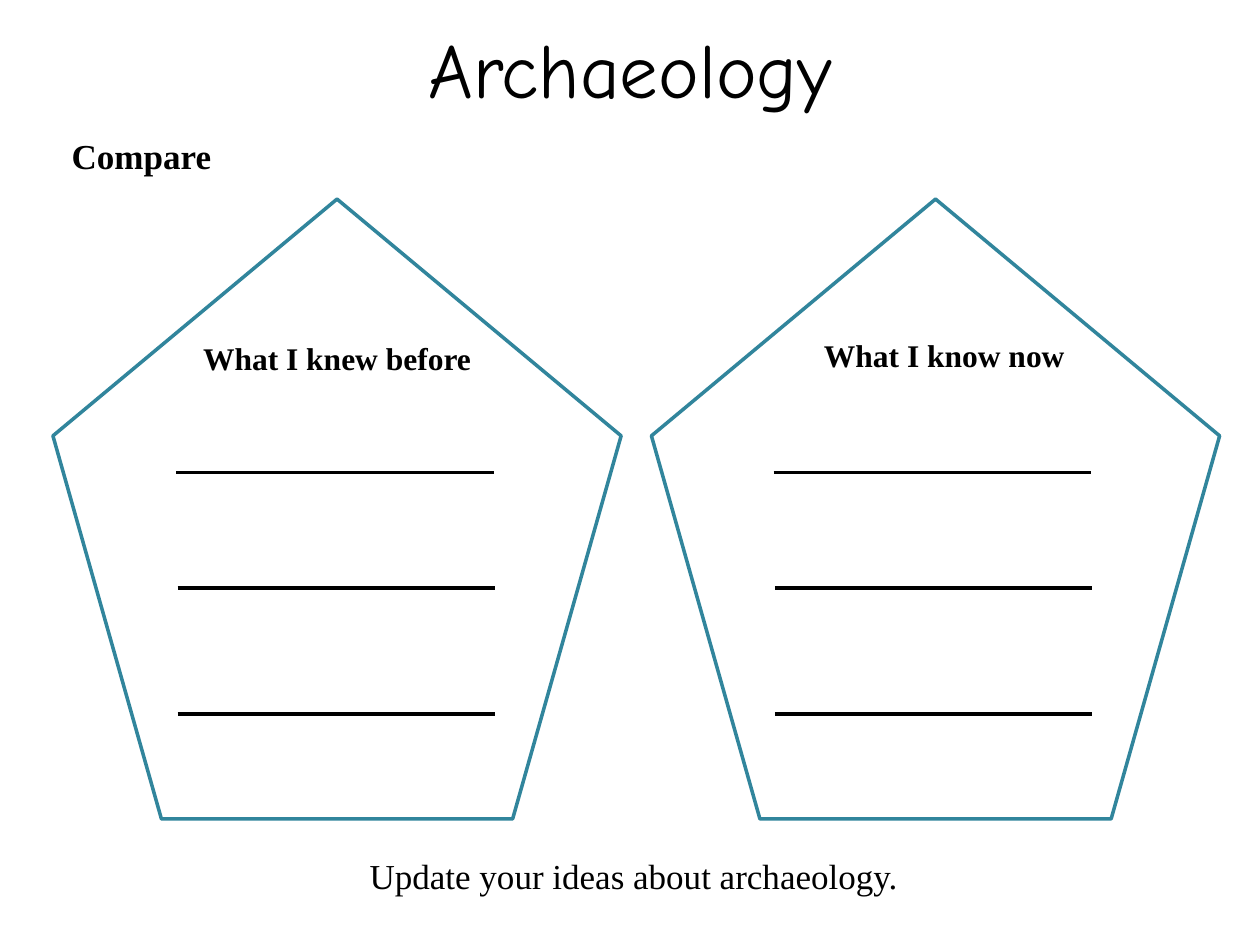
from dataclasses import dataclass

from lxml.etree import SubElement
from pptx import Presentation
from pptx.dml.color import RGBColor
from pptx.enum.shapes import MSO_CONNECTOR, MSO_SHAPE
from pptx.enum.text import MSO_ANCHOR, MSO_AUTO_SIZE, PP_ALIGN
from pptx.oxml.ns import qn
from pptx.util import Inches, Pt


@dataclass(frozen=True)
class Theme:
    """Colours, fonts and sizes of the worksheet."""
    ink: RGBColor = RGBColor(0x00, 0x00, 0x00)
    teal: RGBColor = RGBColor(0x31, 0x85, 0x9C)
    title_font: str = "Comic Neue"
    body_font: str = "Times New Roman"
    title_size: int = 44
    body_size: int = 20
    heading_size: int = 18
    outline_width: float = 2
    rule_width: float = 2.25


THEME = Theme()
PENTAGON_TOP, PENTAGON_WIDTH, PENTAGON_HEIGHT = 1.58, 4.51, 4.92
RULE_LENGTH = 2.52
RULES = [(0, 3.75), (0.01, 4.67), (0.01, 5.67)]
PANELS = [
    ("What I knew before", 0.42, (1.5, 2.64, 2.35, 0.4), 1.4),
    ("What I know now", 5.17, (6.43, 2.62, 2.13, 0.4), 6.14),
]


def write(frame, text, size, font, align, bold=False):
    """Put one styled run into the frame's first paragraph."""
    paragraph = frame.paragraphs[0]
    paragraph.alignment = align
    run = paragraph.add_run()
    run.text = text
    run.font.size = Pt(size)
    run.font.name = font
    run.font.bold = bold
    run.font.color.rgb = THEME.ink


def add_title(slide, text):
    """Place and fill the title placeholder."""
    title = slide.shapes.title
    title.left, title.top = Inches(0.17), Inches(0.08)
    title.width, title.height = Inches(9.67), Inches(0.92)
    title.text_frame.vertical_anchor = MSO_ANCHOR.MIDDLE
    write(title.text_frame, text, THEME.title_size, THEME.title_font, PP_ALIGN.CENTER)


def add_label(slide, text, box, size, align=PP_ALIGN.CENTER, bold=False, wrap=True):
    """Add a text box that grows with its text."""
    frame = slide.shapes.add_textbox(*map(Inches, box)).text_frame
    frame.word_wrap = wrap
    frame.auto_size = MSO_AUTO_SIZE.SHAPE_TO_FIT_TEXT
    write(frame, text, size, THEME.body_font, align, bold)


def add_pentagon(slide, left):
    """Add an unfilled teal pentagon."""
    pentagon = slide.shapes.add_shape(
        MSO_SHAPE.REGULAR_PENTAGON, Inches(left), Inches(PENTAGON_TOP),
        Inches(PENTAGON_WIDTH), Inches(PENTAGON_HEIGHT))
    pentagon.shadow.inherit = False
    pentagon.fill.background()
    pentagon.line.color.rgb = THEME.teal
    pentagon.line.width = Pt(THEME.outline_width)


def add_rule(slide, left, y):
    """Add a horizontal writing line."""
    rule = slide.shapes.add_connector(
        MSO_CONNECTOR.STRAIGHT, Inches(left), Inches(y),
        Inches(left + RULE_LENGTH), Inches(y))
    rule.line.color.rgb = THEME.ink
    rule.line.width = Pt(THEME.rule_width)
    SubElement(rule.element.spPr, qn("a:effectLst"))


def add_panel(slide, heading, pentagon_left, heading_box, rule_left):
    """Add a pentagon with its heading and writing lines."""
    add_pentagon(slide, pentagon_left)
    add_label(slide, heading, heading_box, THEME.heading_size, bold=True, wrap=False)
    for indent, y in RULES:
        add_rule(slide, rule_left + indent, y)


def main():
    """Build and save the worksheet slide."""
    presentation = Presentation()
    presentation.slide_width, presentation.slide_height = Inches(10), Inches(7.5)
    slide = presentation.slides.add_slide(presentation.slide_layouts[5])
    add_title(slide, "Archaeology")
    add_label(slide, "Compare", (0.47, 1.02, 9.12, 0.44), THEME.body_size,
              PP_ALIGN.LEFT, bold=True)
    add_label(slide, "Update your ideas about archaeology.",
              (0.47, 6.73, 9.12, 0.44), THEME.body_size)
    for panel in PANELS:
        add_panel(slide, *panel)
    presentation.save("out.pptx")


if __name__ == "__main__":
    main()
